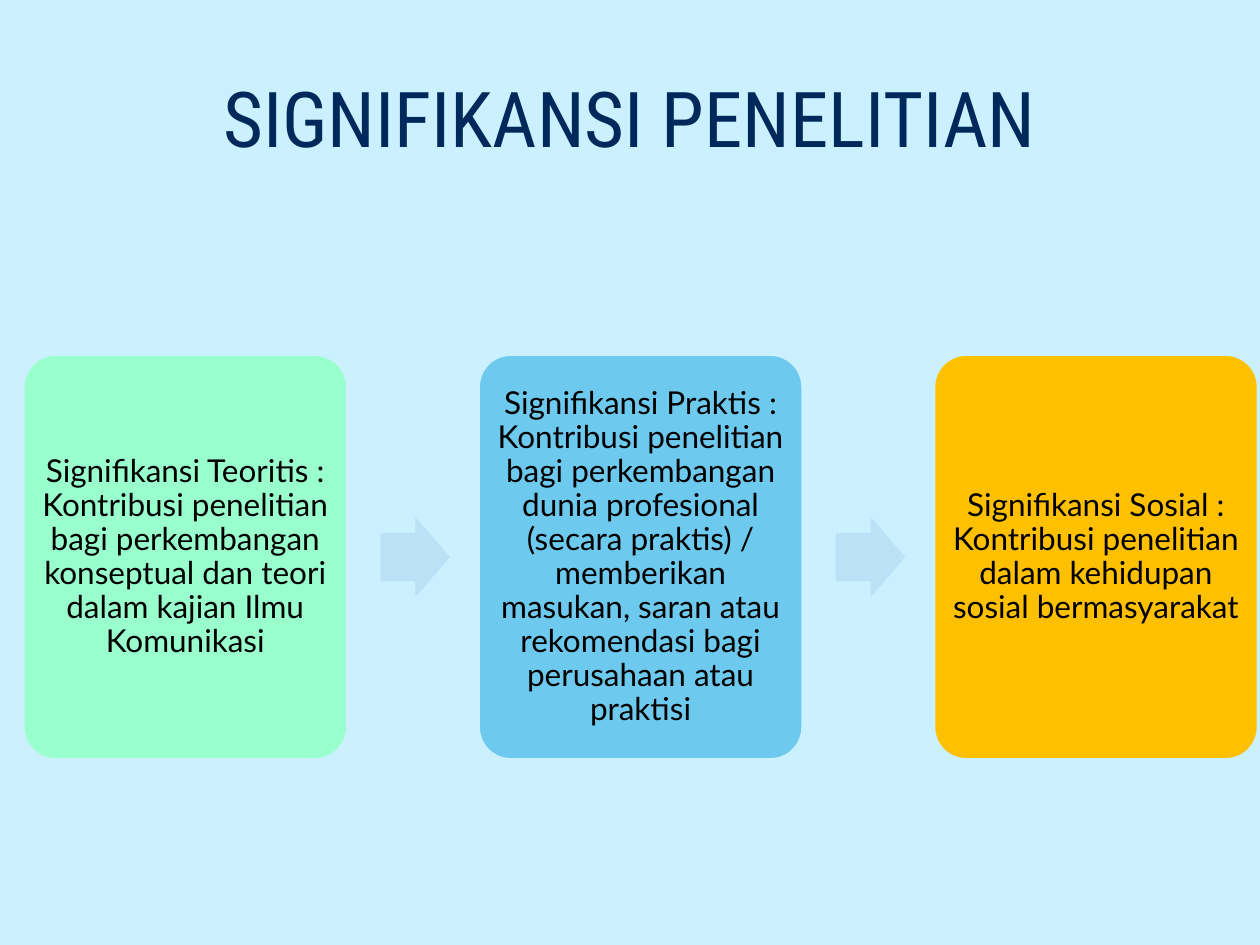
from pptx import Presentation
from pptx.dml.color import RGBColor
from pptx.enum.shapes import MSO_SHAPE
from pptx.enum.text import MSO_ANCHOR, PP_ALIGN
from pptx.util import Pt

ROUNDED = MSO_SHAPE.ROUNDED_RECTANGLE
RIGHT_ARROW = MSO_SHAPE.RIGHT_ARROW
MIDDLE = MSO_ANCHOR.MIDDLE
CENTER = PP_ALIGN.CENTER

PALE_BLUE = RGBColor(0xCB, 0xF0, 0xFF)
NAVY = RGBColor(0x00, 0x29, 0x5B)
BLACK = RGBColor(0x00, 0x00, 0x00)
ARROW_BLUE = RGBColor(0xBA, 0xE1, 0xF5)
MINT = RGBColor(0x99, 0xFF, 0xCC)
SKY = RGBColor(0x6D, 0xC9, 0xEE)
AMBER = RGBColor(0xFF, 0xC0, 0x00)

CARD_LEFT, CARD_TOP = 13.1, 202.4
CARD_WIDTH, CARD_HEIGHT = 185.6, 231.8
CARD_STEP = 260.2
CARD_MARGIN = 5
ARROW_WIDTH, ARROW_HEIGHT = 39.6, 46
ARROW_GAP = 18.8

CARDS = [
    ("Signifikansi Teoritis : Kontribusi penelitian bagi perkembangan "
     "konseptual dan teori dalam kajian Ilmu Komunikasi", MINT),
    ("Signifikansi Praktis : Kontribusi penelitian bagi perkembangan dunia "
     "profesional (secara praktis) / memberikan masukan, saran atau "
     "rekomendasi bagi perusahaan atau praktisi", SKY),
    ("Signifikansi Sosial : Kontribusi penelitian dalam kehidupan sosial "
     "bermasyarakat", AMBER),
]


def write_text(shape, text, font_name, size, color):
    """Put one centred paragraph in the shape and return it."""
    frame = shape.text_frame
    frame.word_wrap = True
    frame.vertical_anchor = MIDDLE
    frame.text = text
    paragraph = frame.paragraphs[0]
    paragraph.alignment = CENTER
    font = paragraph.runs[0].font
    font.name = font_name
    font.size = Pt(size)
    font.color.rgb = color
    return paragraph


def add_filled_shape(slide, kind, left, top, width, height, color):
    shape = slide.shapes.add_shape(kind, Pt(left), Pt(top), Pt(width), Pt(height))
    shape.shadow.inherit = False
    shape.fill.solid()
    shape.fill.fore_color.rgb = color
    return shape


def add_title(slide, text):
    title = slide.shapes.add_textbox(Pt(36), Pt(21.6), Pt(648), Pt(90))
    write_text(title, text, "Roboto Condensed", 44, NAVY)


def add_card(slide, left, text, color):
    card = add_filled_shape(slide, ROUNDED, left, CARD_TOP,
                            CARD_WIDTH, CARD_HEIGHT, color)
    card.adjustments[0] = 0.1
    card.line.color.rgb = PALE_BLUE
    card.line.width = Pt(2)
    frame = card.text_frame
    frame.margin_left = frame.margin_right = Pt(CARD_MARGIN)
    frame.margin_top = frame.margin_bottom = Pt(CARD_MARGIN)
    paragraph = write_text(card, text, "Lato", 18, BLACK)
    paragraph.line_spacing = 0.9


def add_arrow(slide, left):
    top = CARD_TOP + (CARD_HEIGHT - ARROW_HEIGHT) / 2
    arrow = add_filled_shape(slide, RIGHT_ARROW, left, top,
                             ARROW_WIDTH, ARROW_HEIGHT, ARROW_BLUE)
    arrow.adjustments[0] = 0.6
    arrow.adjustments[1] = 0.5
    arrow.line.fill.background()


def main():
    presentation = Presentation()
    presentation.slide_width = Pt(720)
    presentation.slide_height = Pt(540)
    slide = presentation.slides.add_slide(presentation.slide_layouts[6])
    slide.background.fill.solid()
    slide.background.fill.fore_color.rgb = PALE_BLUE

    add_title(slide, "SIGNIFIKANSI PENELITIAN")
    for index, (text, color) in enumerate(CARDS):
        left = CARD_LEFT + index * CARD_STEP
        if index > 0:
            add_arrow(slide, left - CARD_STEP + CARD_WIDTH + ARROW_GAP)
        add_card(slide, left, text, color)

    presentation.save("out.pptx")


if __name__ == "__main__":
    main()
